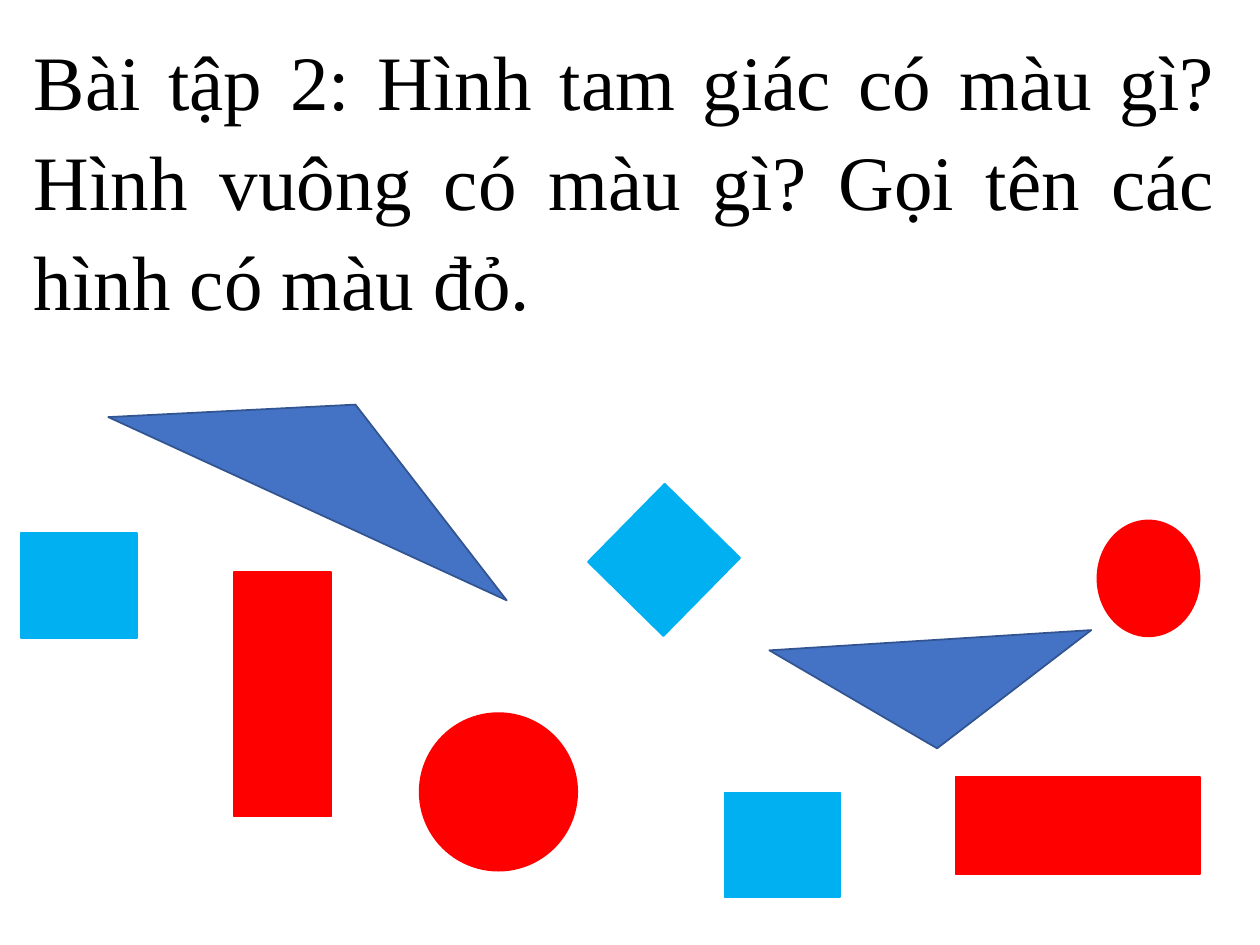
from dataclasses import dataclass

from pptx import Presentation
from pptx.dml.color import RGBColor
from pptx.enum.shapes import MSO_SHAPE
from pptx.enum.text import MSO_ANCHOR, MSO_AUTO_SIZE, PP_ALIGN
from pptx.util import Pt


@dataclass(frozen=True)
class Theme:
    """Colours and type of the exercise."""
    ink: RGBColor = RGBColor(0x00, 0x00, 0x00)
    sky: RGBColor = RGBColor(0x00, 0xB0, 0xF0)
    red: RGBColor = RGBColor(0xFF, 0x00, 0x00)
    blue: RGBColor = RGBColor(0x44, 0x72, 0xC4)
    navy: RGBColor = RGBColor(0x32, 0x54, 0x91)
    font: str = "Times New Roman"
    question_size: int = 44
    outline: int = 1


THEME = Theme()
QUESTION = ("Bài tập 2: Hình tam giác có màu gì? Hình vuông có màu gì? "
            "Gọi tên các hình có màu đỏ.")
QUESTION_BOX = (12.2, 11.5, 689.8, 167)
FIGURES_BOX = (12, 228, 690, 288)

SQUARE = (MSO_SHAPE.RECTANGLE, THEME.sky, THEME.sky)
RECTANGLE = (MSO_SHAPE.RECTANGLE, THEME.red, THEME.red)
CIRCLE = (MSO_SHAPE.OVAL, THEME.red, THEME.red)
TRIANGLE = (MSO_SHAPE.ISOSCELES_TRIANGLE, THEME.blue, THEME.navy)
FIGURES = [
    (SQUARE, (0.2, 76.6, 66.2, 59.8), 0),
    (SQUARE, (337.2, 60.7, 60.5, 62.6), 44.5),
    (SQUARE, (402, 224.9, 66.2, 59.8), 0),
    (RECTANGLE, (121.9, 98.9, 55.4, 139.7), 0),
    (RECTANGLE, (576.2, 173.8, 55.4, 139.7), 270),
    (CIRCLE, (227.8, 179.5, 90, 90), 0),
    (CIRCLE, (615.1, 69.4, 58.3, 66.2), 0),
    (TRIANGLE, (429.4, 137.8, 184.3, 61.9), 176.4),
    (TRIANGLE, (52.1, 0.2, 250.6, 65.5), 24.7),
]


def apply_format(target, values):
    """Set each named attribute of the target."""
    for name, value in values.items():
        setattr(target, name, value)


def place_question(slide, box):
    """Put the exercise question into the title placeholder."""
    question = slide.shapes.title
    apply_format(question, dict(zip(("left", "top", "width", "height"), map(Pt, box))))
    frame = question.text_frame
    frame.text = QUESTION
    apply_format(frame, {"word_wrap": True, "vertical_anchor": MSO_ANCHOR.TOP,
                         "auto_size": MSO_AUTO_SIZE.SHAPE_TO_FIT_TEXT})
    paragraph = frame.paragraphs[0]
    apply_format(paragraph, {"alignment": PP_ALIGN.JUSTIFY, "line_spacing": 1.08,
                             "space_before": Pt(0)})
    font = paragraph.runs[0].font
    apply_format(font, {"name": THEME.font, "size": Pt(THEME.question_size)})
    font.color.rgb = THEME.ink


def place_figures(slide, box):
    """Scatter the coloured figures inside the box."""
    left, top = box[:2]
    for (outline, fill, edge), (x, y, width, height), turn in FIGURES:
        figure = slide.shapes.add_shape(
            outline, Pt(left + x), Pt(top + y), Pt(width), Pt(height))
        figure.rotation = turn
        figure.shadow.inherit = False
        figure.fill.solid()
        figure.fill.fore_color.rgb = fill
        figure.line.color.rgb = edge
        figure.line.width = Pt(THEME.outline)


def main():
    """Build and save the exercise slide."""
    deck = Presentation()
    apply_format(deck, {"slide_width": Pt(720), "slide_height": Pt(540)})
    slide = deck.slides.add_slide(deck.slide_layouts.get_by_name("Title Only"))
    place_question(slide, QUESTION_BOX)
    place_figures(slide, FIGURES_BOX)
    deck.save("out.pptx")


if __name__ == "__main__":
    main()
